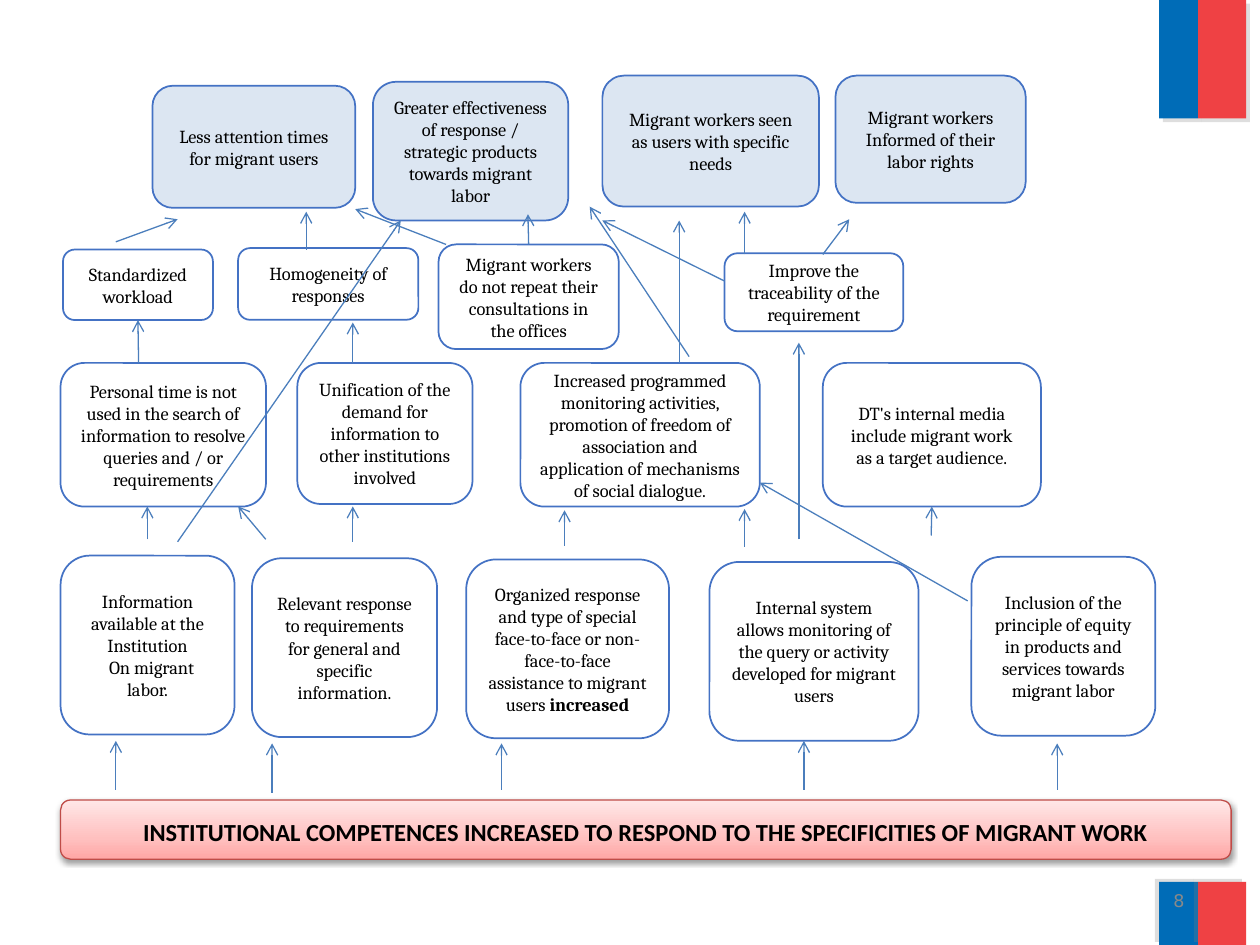
from copy import deepcopy
from lxml import etree
from pptx import Presentation
from pptx import util as u
from pptx.dml.color import RGBColor
from pptx.enum import shapes, text
from pptx.oxml import ns

BLUE = RGBColor(0x00, 0x6C, 0xB7)
RED = RGBColor(0xEF, 0x41, 0x44)
BOX_LINE = RGBColor(0x44, 0x72, 0xC4)
ARROW = RGBColor(0x4B, 0x7E, 0xBC)
PALE = RGBColor(0xDC, 0xE6, 0xF2)
WHITE = RGBColor(0xFF, 0xFF, 0xFF)
BLACK = RGBColor(0x00, 0x00, 0x00)
GREY = RGBColor(0x89, 0x89, 0x89)
BANNER_LINE = RGBColor(0xBF, 0x4C, 0x48)
BANNER_STOPS = [
    (0, RGBColor(0xFF, 0xA6, 0xA5)),
    (0.35, RGBColor(0xFF, 0xC0, 0xBF)),
    (1, RGBColor(0xFF, 0xE7, 0xE7)),
]

deck = Presentation()
deck.slide_width, deck.slide_height = u.Pt(720), u.Pt(540)
page = deck.slides.add_slide(deck.slide_layouts[6])


def add_box(kind, left, top, width, height):
    box = page.shapes.add_shape(kind, u.Pt(left), u.Pt(top), u.Pt(width), u.Pt(height))
    box.shadow.inherit = False
    return box


def cast_shadow(box, color, alpha, blur, distance, angle):
    effects = box._element.spPr.find(ns.qn("a:effectLst"))
    shadow = etree.SubElement(
        effects, ns.qn("a:outerShdw"), blurRad=str(u.Pt(blur)), dist=str(u.Pt(distance)),
        dir=str(angle * 60000), algn="ctr", rotWithShape="0")
    tint = etree.SubElement(shadow, ns.qn("a:srgbClr"), val=color)
    etree.SubElement(tint, ns.qn("a:alpha"), val=str(alpha * 1000))


for top, height, angle in [(0, 67.7, 45), (504, 36, 215)]:
    for left, width, color in [(662.4, 22.3, BLUE), (684.7, 27.4, RED)]:
        stripe = add_box(shapes.MSO_SHAPE.RECTANGLE, left, top, width, height)
        stripe.fill.solid()
        stripe.fill.fore_color.rgb = color
        stripe.line.fill.background()
        cast_shadow(stripe, "808080", 25, 0, 3, angle)

banner = add_box(shapes.MSO_SHAPE.ROUNDED_RECTANGLE, 34.6, 457.2, 668.9, 33.8)
banner.fill.gradient()
banner.fill.gradient_angle = 90
stop_list = banner._element.spPr.find(".//" + ns.qn("a:gsLst"))
stop_list.append(deepcopy(stop_list[0]))
for stop, (position, color) in zip(banner.fill.gradient_stops, BANNER_STOPS):
    stop.position = position
    stop.color.rgb = color
banner.line.color.rgb = BANNER_LINE
banner.line.width = u.Pt(0.75)
cast_shadow(banner, "000000", 38, 3.1, 1.6, 90)
banner.text_frame.vertical_anchor = text.MSO_ANCHOR.MIDDLE
para = banner.text_frame.paragraphs[0]
para.alignment = text.PP_ALIGN.CENTER
para.line_spacing = 1.15
para.space_after = u.Pt(10)
span = para.add_run()
span.text = "INSTITUTIONAL COMPETENCES INCREASED TO RESPOND TO THE SPECIFICITIES OF MIGRANT WORK"
span.font.name, span.font.size, span.font.bold = "Calibri", u.Pt(14), True
span.font.color.rgb = BLACK

impacts = [
    (87.1, 49, 115.9, 69.8, "Less attention times for migrant users"),
    (213.1, 46.8, 111.6, 79.2,
     "Greater effectiveness of response / strategic products towards migrant labor"),
    (344.2, 43.2, 123.8, 74.9, "Migrant workers seen as users with specific needs"),
    (477.4, 43.2, 108.7, 72.7, "Migrant workers Informed of their labor rights"),
]
outcomes = [
    (36, 142.6, 85.7, 40.3, "Standardized workload"),
    (136.1, 141.8, 103, 41, "Homogeneity of responses"),
    (250.6, 139.7, 103, 59.8,
     "Migrant workers do not repeat their consultations in the offices"),
    (414, 144.7, 102.2, 44.6, "Improve the traceability of the requirement"),
    (34.6, 207.4, 117.4, 82.1,
     "Personal time is not used in the search of information to resolve queries and / or requirements"),
    (169.9, 207.4, 100.1, 80.6,
     "Unification of the demand for information to other institutions involved"),
    (297.4, 207.4, 136.8, 82.1,
     "Increased programmed monitoring activities, promotion of freedom of association and "
     "application of mechanisms of social dialogue."),
    (470.2, 207.4, 124.6, 82.1,
     "DT's internal media include migrant work as a target audience."),
]
outputs = [
    (34.6, 317.5, 99.4, 102.2,
     "Information available at the Institution\n  On migrant labor."),
    (144, 319, 105.8, 102.2,
     "Relevant response to requirements for general and specific information."),
    (266.4, 319.7, 115.9, 102.2,
     "Organized response and type of special face-to-face or non-face-to-face assistance "
     "to migrant users *increased"),
    (405.4, 321.1, 119.5, 102.2,
     "Internal system allows monitoring of the query or activity developed for migrant users"),
    (555.1, 318.2, 105.1, 102.2,
     "Inclusion of the principle of equity in products and services towards migrant labor"),
]
boxes = {}
for level, fill in [(outputs, None), (outcomes, WHITE), (impacts, PALE)]:
    for left, top, width, height, wording in level:
        box = add_box(shapes.MSO_SHAPE.ROUNDED_RECTANGLE, left, top, width, height)
        boxes[wording] = box
        if fill is None:
            box.fill.background()
        else:
            box.fill.solid()
            box.fill.fore_color.rgb = fill
        box.line.color.rgb = BOX_LINE
        box.line.width = u.Pt(1)
        frame = box.text_frame
        frame.word_wrap = True
        frame.vertical_anchor = text.MSO_ANCHOR.MIDDLE
        for number, line in enumerate(wording.split("\n")):
            para = frame.add_paragraph() if number else frame.paragraphs[0]
            para.alignment = text.PP_ALIGN.CENTER
            for order, piece in enumerate(line.split("*")):
                span = para.add_run()
                span.text = piece
                span.font.name, span.font.size = "Cambria", u.Pt(10.5)
                span.font.bold = order == 1
                span.font.color.rgb = BLACK

workload = boxes["Standardized workload"]
consultations = boxes[outcomes[2][-1]]
media = boxes[outcomes[-1][-1]]

upright = [
    (175, 142.6, 121, None, None), (301.7, 139.7, 122.4, consultations, None),
    (425.5, 145.4, 121, None, None), (388.1, 207.4, 126, None, None),
    (201.6, 207.4, 184.3, None, None), (79.2, 207.4, 182.9, None, workload),
    (84.2, 308.2, 289.4, None, None), (201.6, 309.6, 289.4, None, None),
    (322.6, 311.8, 291.6, None, None), (425.5, 312.5, 290.9, None, None),
    (456.5, 308.2, 195.8, None, None), (532.1, 306, 289.4, None, media),
    (66.2, 451.4, 423.4, None, None), (155.5, 452.9, 424.8, None, None),
    (286.6, 451.4, 424.8, None, None), (459.4, 451.4, 423.4, None, None),
    (604.1, 451.4, 424.8, None, None),
]
slanted = [
    (393.8, 203.8, 337, 118.1), (66.2, 138.2, 101.5, 125.3), (254.9, 139.7, 203, 119.5),
    (470.2, 145.4, 485.3, 125.3), (151.9, 308.2, 136.1, 289.4), (553, 343.4, 434.2, 275.8),
    (414, 160.6, 344.2, 126), (101.5, 309.6, 229, 126),
]
routes = [(x, start, x, end, source, target) for x, start, end, source, target in upright]
routes += [(*ends, None, None) for ends in slanted]
for x1, y1, x2, y2, source, target in routes:
    arrow = page.shapes.add_connector(
        shapes.MSO_CONNECTOR.STRAIGHT, u.Pt(x1), u.Pt(y1), u.Pt(x2), u.Pt(y2))
    if source is not None:
        arrow.begin_connect(source, 0)
    if target is not None:
        arrow.end_connect(target, 2)
    arrow.line.color.rgb = ARROW
    arrow.line.width = u.Pt(0.75)
    etree.SubElement(arrow.line._get_or_add_ln(), ns.qn("a:tailEnd"), type="arrow")
    etree.SubElement(arrow._element.spPr, ns.qn("a:effectLst"))

number_box = page.shapes.add_textbox(u.Pt(516.2), u.Pt(500.4), u.Pt(167.8), u.Pt(28.8))
number_box.text_frame.word_wrap = True
number_box.text_frame.vertical_anchor = text.MSO_ANCHOR.MIDDLE
para = number_box.text_frame.paragraphs[0]
para.alignment = text.PP_ALIGN.RIGHT
span = para.add_run()
span.text = "8"
span.font.name, span.font.size = "DejaVu Sans", u.Pt(10)
span.font.color.rgb = GREY

deck.save("out.pptx")
